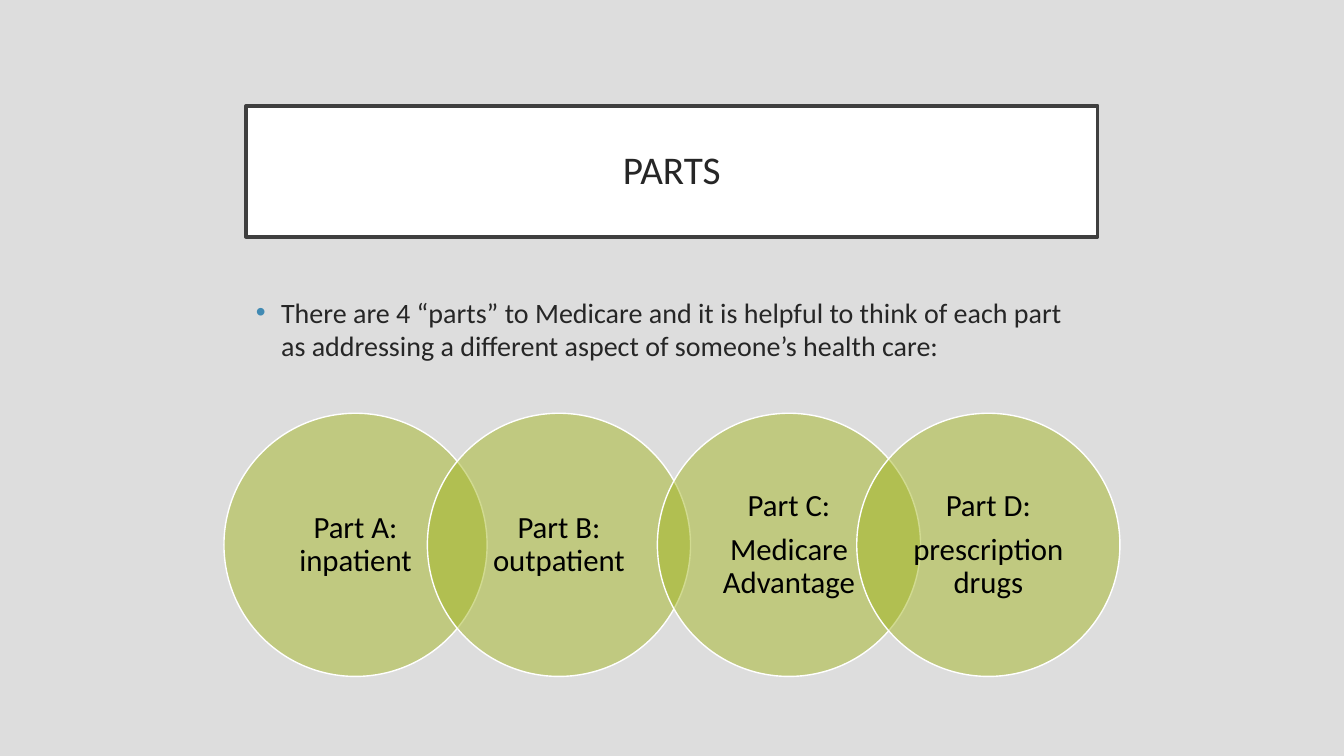
from lxml.etree import SubElement
from pptx import Presentation
from pptx.dml.color import RGBColor
from pptx.enum.shapes import MSO_SHAPE
from pptx.enum.text import MSO_ANCHOR, PP_ALIGN
from pptx.oxml.ns import qn
from pptx.util import Pt

TITLE = "PARTS"
INTRO = (
    "There are 4 “parts” to Medicare and it is helpful to think of each part "
    "as addressing a different aspect of someone’s health care:"
)
PARTS = [
    (160, ["Part A: inpatient"]),
    (305.3, ["Part B: outpatient"]),
    (469.6, ["Part C:", "Medicare Advantage"]),
    (612, ["Part D:", "prescription drugs"]),
]

FONT = "Calibri"
GREY = RGBColor(0xDD, 0xDD, 0xDD)
WHITE = RGBColor(0xFF, 0xFF, 0xFF)
BLACK = RGBColor(0, 0, 0)
FRAME = RGBColor(0x3F, 0x3F, 0x3F)
DARK = RGBColor(0x26, 0x26, 0x26)
GREEN = RGBColor(0xA4, 0xB7, 0x24)

LEFT, WIDTH = 175.7, 608.4
ROW_TOP, SIZE = 295.2, 188


def place(shape, left, top, width, height):
    shape.left, shape.top = Pt(left), Pt(top)
    shape.width, shape.height = Pt(width), Pt(height)


def paint(shape, fill, line, weight):
    shape.fill.solid()
    shape.fill.fore_color.rgb = fill
    shape.line.color.rgb = line
    shape.line.width = Pt(weight)


def pad(frame, side, end):
    frame.margin_left = frame.margin_right = Pt(side)
    frame.margin_top = frame.margin_bottom = Pt(end)
    frame.word_wrap = True


def style(para, size, color):
    para.font.name = FONT
    para.font.size = Pt(size)
    para.font.color.rgb = color


def center(para):
    para.alignment = PP_ALIGN.CENTER
    para.line_spacing = 0.9


def add_title(slide):
    title = slide.shapes.title
    place(title, LEFT, 75.6, WIDTH, 93.6)
    paint(title, WHITE, FRAME, 2.5)
    frame = title.text_frame
    frame.text = TITLE
    frame.vertical_anchor = MSO_ANCHOR.MIDDLE
    pad(frame, 14.4, 14.4)
    center(frame.paragraphs[0])
    style(frame.paragraphs[0], 28, DARK)


def add_intro(slide):
    box = slide.shapes.add_textbox(Pt(LEFT), Pt(207.4), Pt(WIDTH), Pt(64))
    frame = box.text_frame
    frame.text = INTRO
    pad(frame, 7.2, 3.6)
    para = frame.paragraphs[0]
    style(para, 20, DARK)
    props = para._p.get_or_add_pPr()
    props.set("marL", str(Pt(18)))
    props.set("indent", str(-Pt(18)))
    SubElement(SubElement(props, qn("a:buClr")), qn("a:srgbClr"), val="418AB3")
    SubElement(props, qn("a:buFont"), typeface="Arial")
    SubElement(props, qn("a:buChar"), char="•")
    props.append(props.find(qn("a:defRPr")))


def add_part(slide, left, lines):
    disc = slide.shapes.add_shape(
        MSO_SHAPE.OVAL, Pt(left), Pt(ROW_TOP), Pt(SIZE), Pt(SIZE)
    )
    disc.shadow.inherit = False
    paint(disc, GREEN, WHITE, 1)
    color = disc.fill._xPr.find(qn("a:solidFill"))[0]
    SubElement(color, qn("a:alpha"), val="50000")
    frame = disc.text_frame
    frame.text = "\n".join(lines)
    frame.vertical_anchor = MSO_ANCHOR.MIDDLE
    pad(frame, 10, 2)
    for i, para in enumerate(frame.paragraphs):
        center(para)
        style(para, 22, BLACK)
        if i:
            para.space_before = Pt(7.7)


def main():
    deck = Presentation()
    deck.slide_width, deck.slide_height = Pt(960), Pt(540)
    slide = deck.slides.add_slide(deck.slide_layouts[5])
    slide.background.fill.solid()
    slide.background.fill.fore_color.rgb = GREY
    add_title(slide)
    add_intro(slide)
    for left, lines in PARTS:
        add_part(slide, left, lines)
    deck.save("out.pptx")


if __name__ == "__main__":
    main()
